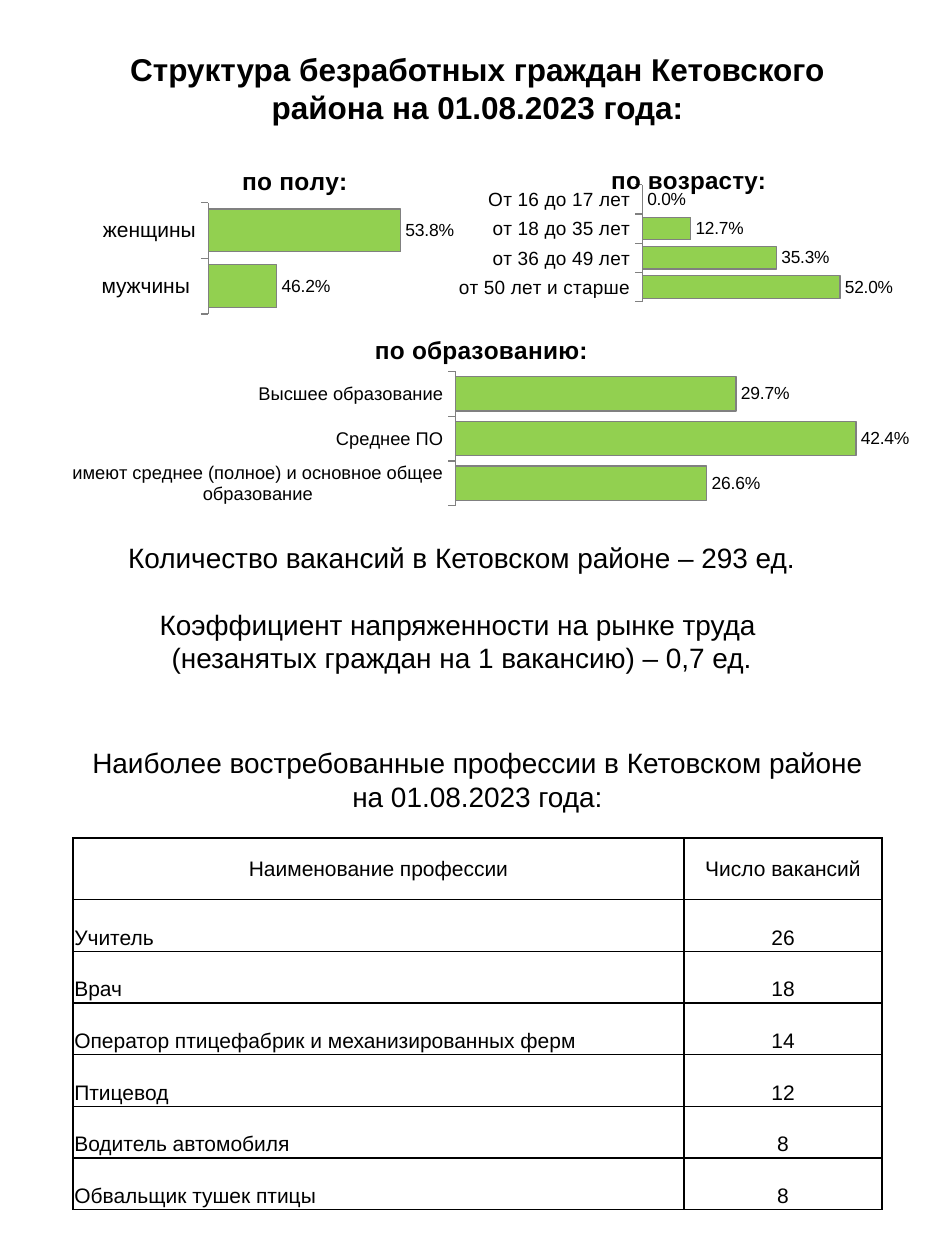
"""Build a one-page report on unemployment in the Ketovo district."""
from lxml import etree
from pptx import Presentation
from pptx.chart.data import CategoryChartData
from pptx.dml.color import RGBColor
from pptx.enum.chart import XL_CHART_TYPE, XL_LABEL_POSITION, XL_TICK_MARK
from pptx.enum.text import MSO_ANCHOR, PP_ALIGN
from pptx.oxml import parse_xml
from pptx.oxml.ns import nsdecls, qn
from pptx.util import Inches, Pt

BAR = XL_CHART_TYPE.BAR_CLUSTERED
OUT_END = XL_LABEL_POSITION.OUTSIDE_END
TICK_OUT = XL_TICK_MARK.OUTSIDE
CENTER, LEFT = PP_ALIGN.CENTER, PP_ALIGN.LEFT
MIDDLE = MSO_ANCHOR.MIDDLE

COLORS = {"text": "000000", "bar": "92D050", "axis": "808080"}
FONT = "Arial"
PERCENT = "0.0%"

CHARTS = [
    dict(title="по полу:", box=(0.69, 1.22, 2.92, 1.34),
         data=[("мужчины ", 0.462), ("женщины", 0.538)],
         plot=(0.33, 0.29, 0.62, 0.66), title_at=(0.41, 0.04),
         size=12, limits=(0.42, 0.56), reverse=False),
    dict(title="по возрасту:", box=(3.51, 1.22, 3.58, 1.18),
         data=[("От 16 до 17 лет", 0), ("от 18 до 35 лет", 0.127),
               ("от 36 до 49 лет", 0.353), ("от 50 лет и старше", 0.52)],
         plot=(0.45, 0.21, 0.53, 0.79), title_at=(0.37, 0.04),
         size=11, limits=(0, 0.62), reverse=True),
    dict(title="по образованию:", box=(0.44, 2.56, 6.78, 1.5),
         data=[("Высшее образование", 0.297), ("Среднее ПО", 0.424),
               ("имеют среднее (полное) и основное общее образование", 0.266)],
         plot=(0.47, 0.26, 0.51, 0.71), title_at=(0.37, 0.04),
         size=10.5, limits=(0, 0.46), reverse=True),
]

HEADER = ("Наименование профессии", "Число вакансий")
JOBS = [
    ("Учитель", 26),
    ("Врач", 18),
    ("Оператор птицефабрик и механизированных ферм", 14),
    ("Птицевод", 12),
    ("Водитель автомобиля", 8),
    ("Обвальщик тушек птицы", 8),
]


def rgb(name):
    """Return a named colour."""
    return RGBColor.from_string(COLORS[name])


def style_font(font, size, bold=False):
    """Apply the common typeface and text colour."""
    font.name, font.size, font.bold = FONT, Pt(size), bold
    font.color.rgb = rgb("text")


def add_text(s, box, lines, size, bold=False):
    """Add a centred text box and return its paragraphs."""
    tf = s.shapes.add_textbox(*map(Inches, box)).text_frame
    tf.word_wrap = True
    tf.text = "\n".join(lines)
    for p in tf.paragraphs:
        p.alignment = CENTER
        style_font(p.font, size, bold)
    return tf.paragraphs


def set_layout(element, index, values, inner=False):
    """Place a chart part by fractions of the chart area."""
    for old in element.findall(qn("c:layout")):
        element.remove(old)
    layout = parse_xml(f"<c:layout {nsdecls('c')}><c:manualLayout/></c:layout>")
    manual = layout[0]
    if inner:
        etree.SubElement(manual, qn("c:layoutTarget")).set("val", "inner")
    for tag in ("xMode", "yMode"):
        etree.SubElement(manual, qn(f"c:{tag}")).set("val", "edge")
    for tag, value in zip("xywh", values):
        etree.SubElement(manual, qn(f"c:{tag}")).set("val", str(value))
    element.insert(index, layout)


def add_bar_chart(s, title, box, data, plot, title_at, size, limits, reverse):
    """Add a titled horizontal bar chart with percentage labels."""
    chart_data = CategoryChartData(number_format=PERCENT)
    chart_data.categories = [name for name, _ in data]
    chart_data.add_series(title, [value for _, value in data])
    chart = s.shapes.add_chart(BAR, *map(Inches, box), chart_data).chart
    chart.has_legend = False
    style_font(chart.font, 12)

    chart.has_title = True
    tf = chart.chart_title.text_frame
    tf.text = title
    style_font(tf.paragraphs[0].font, 14, True)
    set_layout(chart.chart_title._element, 1, title_at)
    set_layout(chart._chartSpace.chart.plotArea, 0, plot, inner=True)

    cat = chart.category_axis
    cat.reverse_order = reverse
    cat.major_tick_mark = TICK_OUT
    cat.format.line.color.rgb = rgb("axis")
    style_font(cat.tick_labels.font, size)
    val = chart.value_axis
    val.minimum_scale, val.maximum_scale = limits
    val.has_major_gridlines = False
    val.visible = False

    bars = chart.plots[0]
    bars.gap_width = 30
    bars.vary_by_categories = False
    series = bars.series[0]
    series.invert_if_negative = False
    series.format.fill.solid()
    series.format.fill.fore_color.rgb = rgb("bar")
    series.format.line.color.rgb = rgb("axis")
    series.format.line.width = Pt(0.75)
    labels = series.data_labels
    labels.show_value = True
    labels.position = OUT_END
    labels.number_format = PERCENT
    labels.number_format_is_linked = False
    style_font(labels.font, 10)


def add_borders(cell):
    """Draw a thin line on each side of a cell."""
    tc_pr = cell._tc.get_or_add_tcPr()
    for side in "LRTB":
        tc_pr.append(parse_xml(
            f'<a:ln{side} {nsdecls("a")} w="12700"><a:solidFill>'
            f'<a:srgbClr val="{COLORS["text"]}"/></a:solidFill></a:ln{side}>'))


def fill_cell(cell, text, align, spacing):
    """Write and format one table cell."""
    cell.text = str(text)
    cell.vertical_anchor = MIDDLE
    cell.margin_left = cell.margin_right = cell.margin_top = Inches(0.01)
    cell.margin_bottom = 0
    p = cell.text_frame.paragraphs[0]
    p.alignment, p.line_spacing = align, spacing
    style_font(p.font, 12)
    add_borders(cell)
    cell.fill.background()


def add_jobs_table(s):
    """Add the table of professions in demand."""
    rows = [HEADER, *JOBS]
    box = map(Inches, (0.58, 6.65, 6.42, 2.95))
    table = s.shapes.add_table(len(rows), 2, *box).table
    table.first_row = table.horz_banding = False
    for column, width in zip(table.columns, (4.85, 1.57)):
        column.width = Inches(width)
    for i, row in enumerate(rows):
        table.rows[i].height = Inches(0.41 if i else 0.49)
        for j, text in enumerate(row):
            align = LEFT if i and j == 0 else CENTER
            fill_cell(table.cell(i, j), text, align, 2.0 if i else 1.0)


def main():
    """Build and save the slide."""
    prs = Presentation()
    prs.slide_width, prs.slide_height = Inches(7.5), Inches(10)
    s = prs.slides.add_slide(prs.slide_layouts[6])
    add_text(s, (0.68, 0.35, 6.22, 0.71),
             ["Структура безработных граждан Кетовского района на 01.08.2023 года:"],
             18, True)
    for chart in CHARTS:
        add_bar_chart(s, **chart)
    summary = add_text(s, (0.41, 4.24, 6.51, 1.18),
                       ["Количество вакансий в Кетовском районе – 293 ед.",
                        "Коэффициент напряженности на рынке труда ",
                        "(незанятых граждан на 1 вакансию) – 0,7 ед."], 16)
    summary[0].space_after = Pt(19)
    add_text(s, (0.6, 5.87, 6.38, 0.64),
             ["Наиболее востребованные профессии в Кетовском районе на 01.08.2023 года:"],
             16)
    add_jobs_table(s)
    prs.save("out.pptx")


if __name__ == "__main__":
    main()
